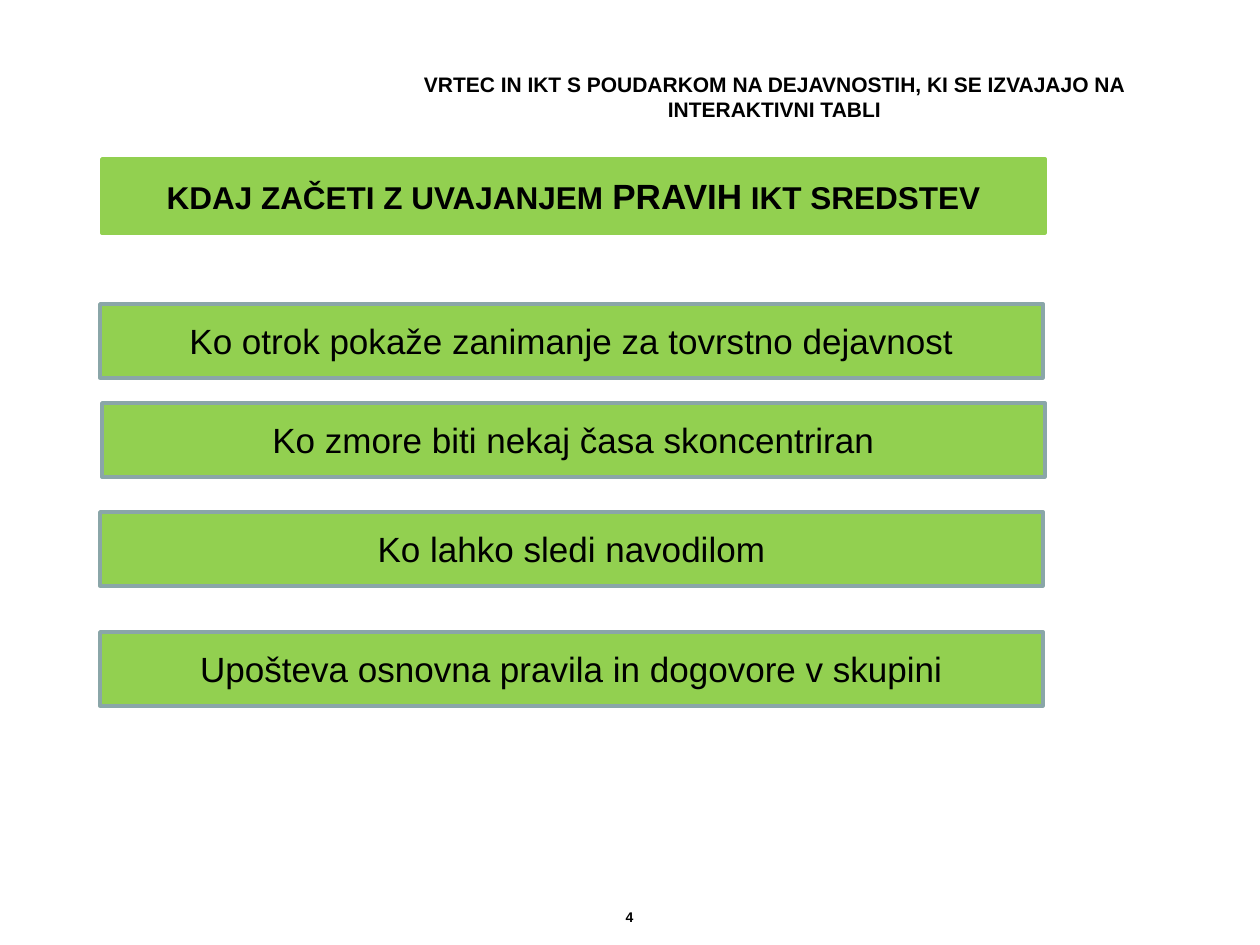
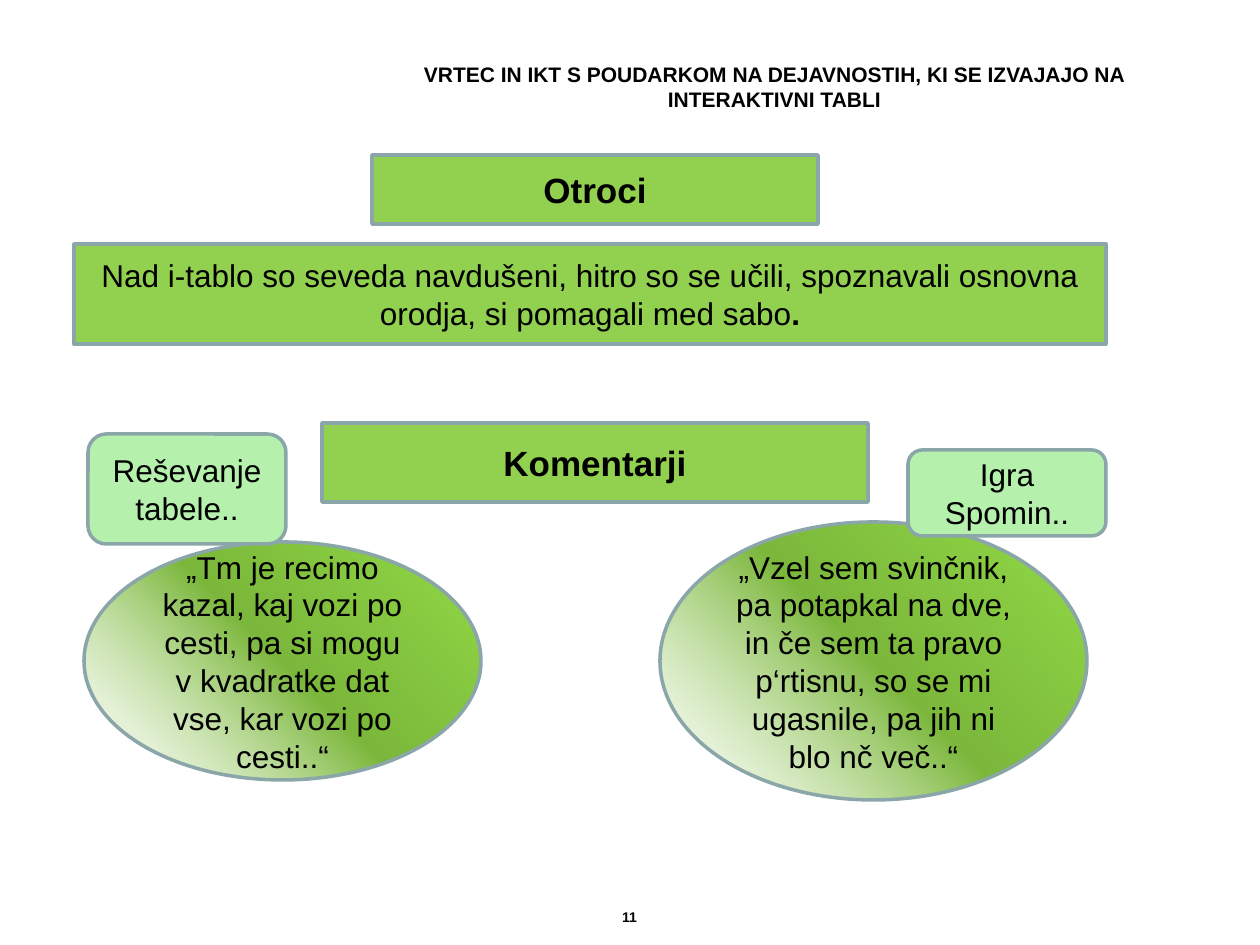
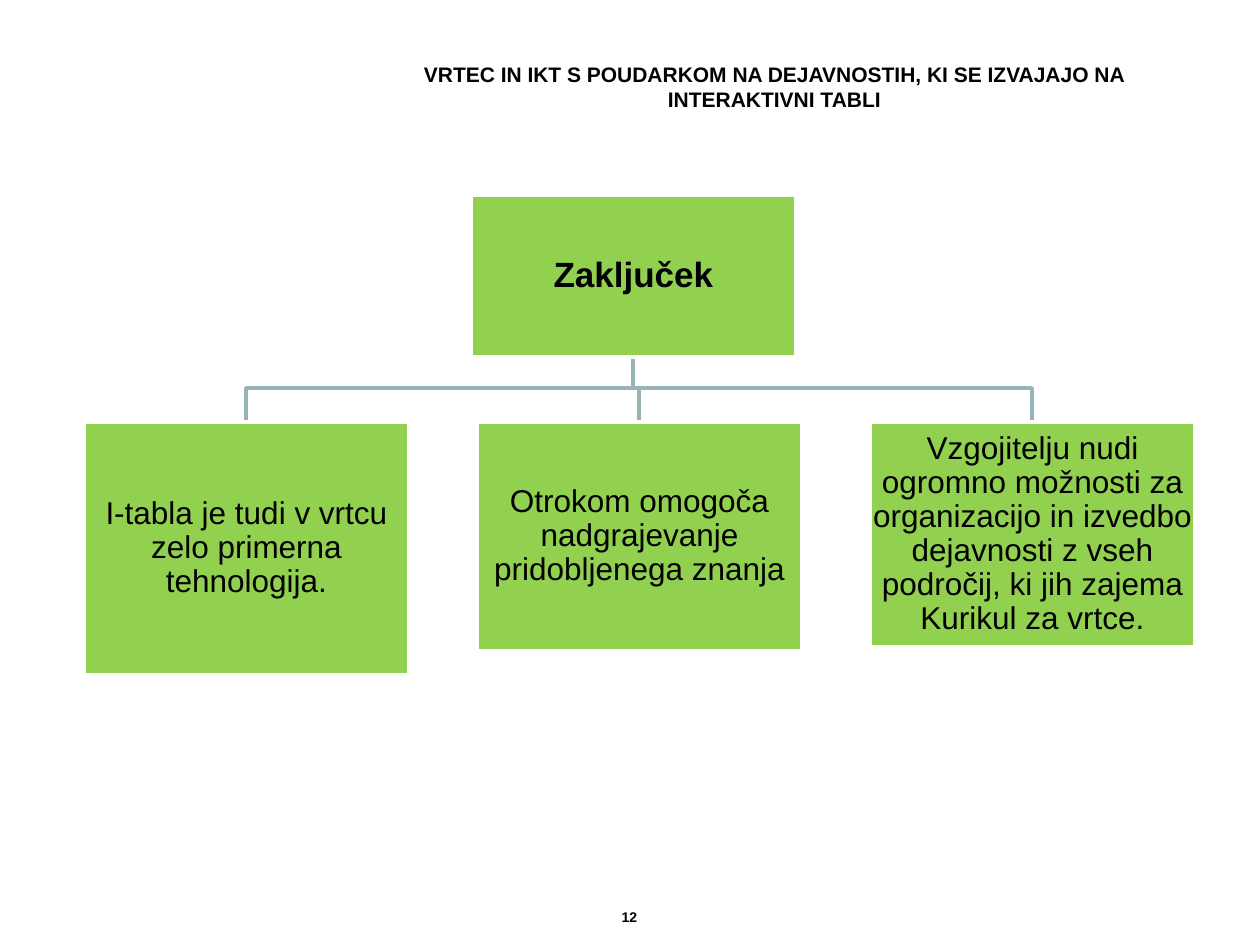
from lxml.etree import fromstring
from pptx import Presentation
from pptx.dml.color import RGBColor
from pptx.enum.shapes import MSO_SHAPE
from pptx.enum.text import MSO_ANCHOR, MSO_AUTO_SIZE, PP_ALIGN
from pptx.oxml.ns import qn
from pptx.util import Pt

PX = 914400 / 126  # EMU per pixel
COLORS = {
    "text": "000000",
    "green": "92D050",
    "mint": "B5F1AD",
    "border": "8AA6A8",
    "branch": "96B3B6",
    "white": "FFFFFF",
}
HEADER = "VRTEC IN IKT S POUDARKOM NA DEJAVNOSTIH, KI SE IZVAJAJO NA INTERAKTIVNI TABLI"
BUBBLE_GRADIENT = """
<a:gradFill xmlns:a="http://schemas.openxmlformats.org/drawingml/2006/main" rotWithShape="1">
  <a:gsLst>
    <a:gs pos="0"><a:srgbClr val="BCDE98"><a:alpha val="0"/></a:srgbClr></a:gs>
    <a:gs pos="50000"><a:srgbClr val="7BB73B"/></a:gs>
    <a:gs pos="100000"><a:srgbClr val="92DA46"/></a:gs>
  </a:gsLst>
  <a:path path="circle"><a:fillToRect t="100000" r="100000"/></a:path>
</a:gradFill>"""


def write(frame, runs):
    """Fill a text frame with one centred paragraph of (text, size, bold) runs."""
    frame.word_wrap = True
    paragraph = frame.paragraphs[0]
    paragraph.alignment = PP_ALIGN.CENTER
    for text, size, bold in runs:
        run = paragraph.add_run()
        run.text = text
        run.font.name = "Arial"
        run.font.size = Pt(size)
        run.font.bold = bold
        run.font.color.rgb = RGBColor.from_string(COLORS["text"])


def add_box(slide, bounds, runs, fill="green", border="border", outline=MSO_SHAPE.RECTANGLE):
    box = slide.shapes.add_shape(outline, *[round(v * PX) for v in bounds])
    box.shadow.inherit = False
    box.fill.solid()
    box.fill.fore_color.rgb = RGBColor.from_string(COLORS[fill])
    box.line.color.rgb = RGBColor.from_string(COLORS[border])
    box.line.width = Pt(2)
    write(box.text_frame, runs)
    return box


prs = Presentation()
prs.slide_width = round(1260 * PX)
prs.slide_height = round(945 * PX)

# Shared header and page number
slides = []
for page_number, header_top in (("4", 65), ("11", 55), ("12", 55)):
    slide = prs.slides.add_slide(prs.slide_layouts[5])
    header = slide.shapes.title
    header.left, header.top, header.width, header.height = [
        round(v * PX) for v in (353, header_top, 843, 115 - header_top)]
    header.text_frame.auto_size = MSO_AUTO_SIZE.NONE
    header.text_frame.vertical_anchor = MSO_ANCHOR.TOP
    write(header.text_frame, [(HEADER, 12, True)])
    footer = slide.shapes.add_textbox(*[round(v * PX) for v in (64, 902, 1131, 43)])
    write(footer.text_frame, [(page_number, 8, True)])
    slides.append(slide)
start_slide, children_slide, conclusion_slide = slides

# When to start: heading and four conditions
add_box(start_slide, (102, 159, 943, 74), [
    ("KDAJ ZAČETI Z UVAJANJEM ", 18, True),
    ("PRAVIH", 20, True),
    (" IKT SREDSTEV", 18, True),
], border="green")
for left, top, condition in (
    (100, 304, "Ko otrok pokaže zanimanje za tovrstno dejavnost"),
    (102, 403, "Ko zmore biti nekaj časa skoncentriran"),
    (100, 512, "Ko lahko sledi navodilom"),
    (100, 632, "Upošteva osnovna pravila in dogovore v skupini"),
):
    add_box(start_slide, (left, top, 943, 74), [(condition, 20, False)])

# Children: headings and summary
add_box(children_slide, (372, 155, 446, 69), [("Otroci", 20, True)])
add_box(children_slide, (74, 244, 1032, 100), [
    ("Nad i-tablo so seveda navdušeni, hitro so se učili, spoznavali osnovna orodja, "
     "si pomagali med sabo", 18, False),
    (".", 18, True),
])
add_box(children_slide, (322, 423, 546, 79), [("Komentarji", 20, True)])

# Children: quotes with their activity labels
for bounds, quote in (
    ((84, 542, 397, 238), "„Tm je recimo kazal, kaj vozi po cesti, pa si mogu v kvadratke dat vse, "
                          "kar vozi po cesti..“"),
    ((660, 522, 427, 278), "„Vzel sem svinčnik, pa potapkal na dve, in če sem ta pravo p‘rtisnu, "
                           "so se mi ugasnile, pa jih ni blo nč več..“"),
):
    bubble = add_box(children_slide, bounds, [(quote, 18, False)], outline=MSO_SHAPE.OVAL)
    properties = bubble.fill._xPr
    properties.replace(properties.find(qn("a:solidFill")), fromstring(BUBBLE_GRADIENT))
for bounds, activity in (
    ((88, 434, 198, 110), "Reševanje tabele.."),
    ((908, 450, 198, 86), "Igra Spomin.."),
):
    add_box(children_slide, bounds, [(activity, 18, False)], fill="mint",
            outline=MSO_SHAPE.ROUNDED_RECTANGLE)

# Conclusion: branches from the root to three findings
FINDING_LEFT, FINDING_STEP, FINDING_TOP, NODE_WIDTH = 84, 393, 422, 325
ROOT = (471, 195, NODE_WIDTH, 162)
root_center = ROOT[0] + NODE_WIDTH // 2
root_bottom = ROOT[1] + ROOT[3]
findings = (
    (253, "I-tabla je tudi v vrtcu zelo primerna tehnologija."),
    (229, "Otrokom omogoča nadgrajevanje pridobljenega znanja"),
    (225, "Vzgojitelju nudi ogromno možnosti za organizacijo in izvedbo dejavnosti "
          "z vseh področij, ki jih zajema Kurikul za vrtce."),
)
nodes = [(ROOT, "Zaključek", 20, True)]
for column, (height, finding) in enumerate(findings):
    left = FINDING_LEFT + column * FINDING_STEP
    nodes.append(((left, FINDING_TOP, NODE_WIDTH, height), finding, 18, False))
    center = left + NODE_WIDTH // 2
    path_builder = conclusion_slide.shapes.build_freeform(root_center, root_bottom, scale=PX)
    path_builder.add_line_segments(
        [(root_center, 388), (center, 388), (center, FINDING_TOP)], close=False)
    branch = path_builder.convert_to_shape()
    branch.shadow.inherit = False
    branch.fill.background()
    branch.line.color.rgb = RGBColor.from_string(COLORS["branch"])
    branch.line.width = Pt(2)

for bounds, text, size, bold in nodes:
    frame = add_box(conclusion_slide, bounds, [(text, size, bold)], border="white").text_frame
    frame.margin_left = frame.margin_right = frame.margin_top = frame.margin_bottom = round(PX)
    frame.paragraphs[0].line_spacing = 0.9

prs.save("out.pptx")
